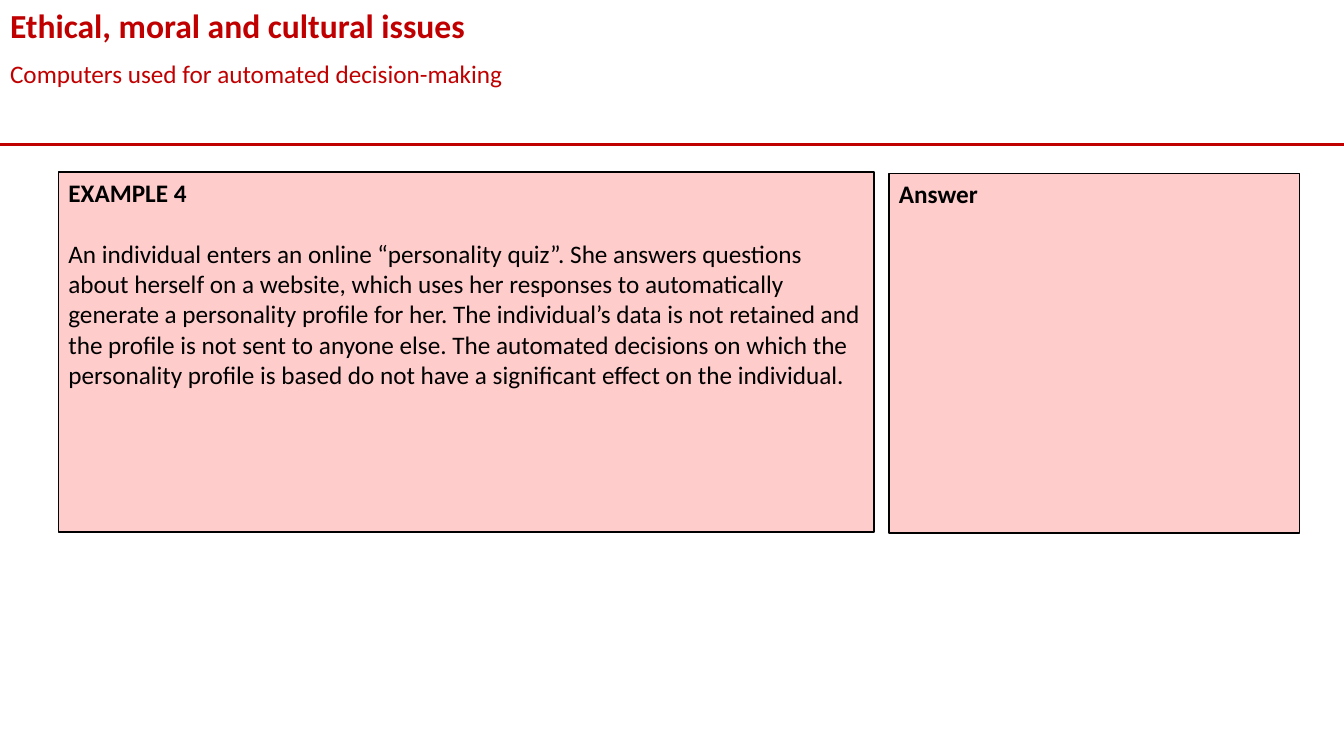
"""Build the slide on automated decision-making with its example and answer boxes."""
from lxml import etree
from pptx import Presentation, util as u
from pptx.dml.color import RGBColor as Rgb
from pptx.enum import shapes, text
from pptx.oxml import ns

Pt = u.Pt
theme = {
    "face": "Calibri",
    "red": Rgb.from_string("C00000"),
    "pink": Rgb.from_string("FFCCCC"),
    "black": Rgb.from_string("000000"),
    "head": Pt(24),
    "base": Pt(18),
}


def place(item, left, top, width, height):
    spot = {"left": left, "top": top, "width": width, "height": height}
    for key, val in spot.items():
        setattr(item, key, Pt(val))


def write(item, lines, size, tint, gap=0):
    frame = item.text_frame
    form = {
        "word_wrap": True,
        "auto_size": text.MSO_AUTO_SIZE.NONE,
        "vertical_anchor": text.MSO_ANCHOR.TOP,
    }
    for key, val in form.items():
        setattr(frame, key, val)
    for num, (words, bold) in enumerate(lines):
        para = frame.add_paragraph() if num else frame.paragraphs[0]
        form = {
            "alignment": text.PP_ALIGN.LEFT,
            "space_before": Pt(gap if num else 0),
        }
        for key, val in form.items():
            setattr(para, key, val)
        run = para.add_run()
        run.text = words
        form = {"name": theme["face"], "size": size, "bold": bold}
        for key, val in form.items():
            setattr(run.font, key, val)
        run.font.color.rgb = tint


deck = Presentation()
deck.slide_width, deck.slide_height = Pt(960), Pt(540)
slide = deck.slides.add_slide(deck.slide_layouts[1])

rule = slide.shapes.add_connector(
    shapes.MSO_CONNECTOR.STRAIGHT, Pt(0), Pt(103.5), Pt(960), Pt(103.5)
)
rule.line.color.rgb = theme["red"]
rule.line.width = Pt(2.25)
etree.SubElement(rule._element.spPr, ns.qn("a:effectLst"))

title, body = slide.placeholders
place(title, 0, 0, 960, 36)
write(title, [("Ethical, moral and cultural issues", True)], theme["head"], theme["red"])
place(body, 0, 38, 960, 29)
write(
    body,
    [("Computers used for automated decision-making", False)],
    theme["base"],
    theme["red"],
)
props = body.text_frame.paragraphs[0]._p.get_or_add_pPr()
for key in ("marL", "indent"):
    props.set(key, "0")
etree.SubElement(props, ns.qn("a:buNone"))

case = (
    "An individual enters an online “personality quiz”. She answers questions "
    "about herself on a website, which uses her responses to automatically "
    "generate a personality profile for her. The individual’s data is not retained "
    "and the profile is not sent to anyone else. The automated decisions on which "
    "the personality profile is based do not have a significant effect on the "
    "individual."
)
cards = [
    (41.75, 123, 582.5, [("EXAMPLE 4", True), (case, False)]),
    (635, 123.75, 293.25, [("Answer", True)]),
]
for left, top, width, lines in cards:
    card = slide.shapes.add_shape(
        shapes.MSO_SHAPE.RECTANGLE, Pt(left), Pt(top), Pt(width), Pt(257)
    )
    card.shadow.inherit = False
    card.fill.solid()
    card.fill.fore_color.rgb = theme["pink"]
    card.line.color.rgb = theme["black"]
    card.line.width = Pt(1)
    write(card, lines, theme["base"], theme["black"], gap=22)

deck.save("out.pptx")
